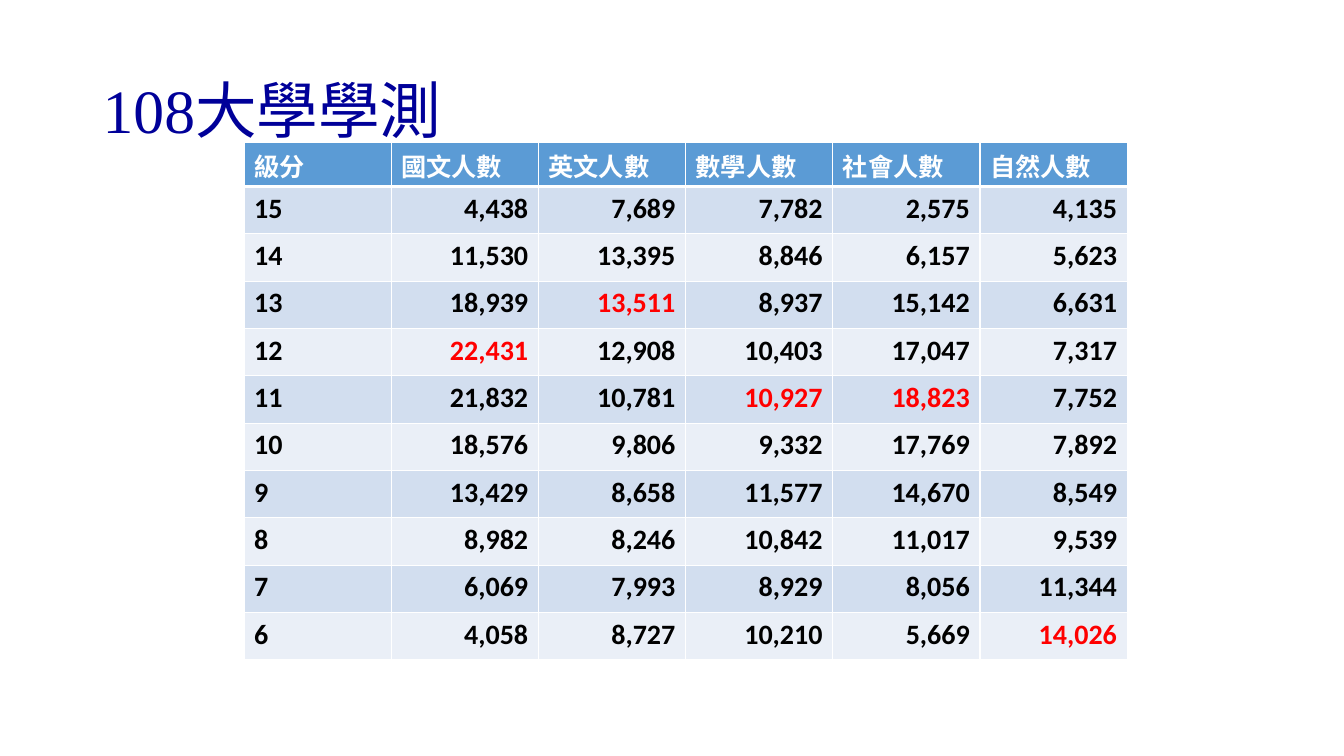
from lxml import etree
from pptx import Presentation
from pptx.dml.color import RGBColor
from pptx.enum.text import MSO_ANCHOR, PP_ALIGN
from pptx.oxml.ns import qn
from pptx.util import Inches, Pt

LEFT, RIGHT = PP_ALIGN.LEFT, PP_ALIGN.RIGHT
MIDDLE = MSO_ANCHOR.MIDDLE

NAVY = RGBColor(0x00, 0x00, 0x99)
BLUE = RGBColor(0x5B, 0x9B, 0xD5)
MID = RGBColor(0xD2, 0xDE, 0xEF)
PALE = RGBColor(0xEA, 0xEF, 0xF7)
WHITE = RGBColor(0xFF, 0xFF, 0xFF)
BLACK = RGBColor(0x00, 0x00, 0x00)
RED = RGBColor(0xFF, 0x00, 0x00)

TITLE = {"name": "Times New Roman", "size": Pt(44)}
HEAD = {"name": "Calibri", "size": Pt(18), "bold": True}
BODY = {**HEAD, "size": Pt(20)}

LABELS = ["級分", "國文人數", "英文人數", "數學人數", "社會人數", "自然人數"]
SCORES = [
    (15, 4438, 7689, 7782, 2575, 4135),
    (14, 11530, 13395, 8846, 6157, 5623),
    (13, 18939, 13511, 8937, 15142, 6631),
    (12, 22431, 12908, 10403, 17047, 7317),
    (11, 21832, 10781, 10927, 18823, 7752),
    (10, 18576, 9806, 9332, 17769, 7892),
    (9, 13429, 8658, 11577, 14670, 8549),
    (8, 8982, 8246, 10842, 11017, 9539),
    (7, 6069, 7993, 8929, 8056, 11344),
    (6, 4058, 8727, 10210, 5669, 14026),
]
MARKED = {(3, 2), (4, 1), (5, 3), (5, 4), (10, 5)}


def write(para, text, style, color, align=LEFT):
    """Put one styled run in a paragraph."""
    para.alignment = align
    run = para.add_run()
    run.text = text
    for key, value in style.items():
        setattr(run.font, key, value)
    run.font.color.rgb = color


def add_title(slide, text):
    """Add the slide title."""
    box = slide.shapes.add_textbox(
        Inches(0.92), Inches(0.4), Inches(11.5), Inches(1.45))
    frame = box.text_frame
    frame.word_wrap = True
    frame.vertical_anchor = MIDDLE
    para = frame.paragraphs[0]
    para.line_spacing = 0.9
    write(para, text, TITLE, NAVY)


def add_edges(cell, row):
    """Draw white cell borders, thick under the header row."""
    props = cell._tc.get_or_add_tcPr()
    widths = {"L": 1, "R": 1, "T": 3 if row == 1 else 1,
              "B": 3 if row == 0 else 1}
    for side, width in widths.items():
        line = etree.SubElement(props, qn(f"a:ln{side}"), w=str(Pt(width)))
        fill = etree.SubElement(line, qn("a:solidFill"))
        etree.SubElement(fill, qn("a:srgbClr"), val=str(WHITE))


def fill_cell(cell, row, col, value):
    """Style one cell by its place in the table."""
    add_edges(cell, row)
    cell.fill.solid()
    para = cell.text_frame.paragraphs[0]
    if row == 0:
        cell.fill.fore_color.rgb = BLUE
        write(para, value, HEAD, WHITE)
    else:
        cell.fill.fore_color.rgb = MID if row % 2 else PALE
        color = RED if (row, col) in MARKED else BLACK
        write(para, f"{value:,}", BODY, color, RIGHT if col else LEFT)


def add_scores(slide):
    """Add the table of head counts by score."""
    rows = [LABELS, *SCORES]
    table = slide.shapes.add_table(
        len(rows), len(LABELS), Inches(2.42), Inches(1.41),
        Inches(8.76), Inches(5.17)).table
    for col in table.columns:
        col.width = Inches(1.46)
    for row, values in enumerate(rows):
        table.rows[row].height = Inches(0.47 if row else 0.44)
        for col, value in enumerate(values):
            fill_cell(table.cell(row, col), row, col, value)


def main():
    """Build and save the slide."""
    deck = Presentation()
    deck.slide_width, deck.slide_height = Inches(13.33), Inches(7.5)
    slide = deck.slides.add_slide(deck.slide_layouts[6])
    add_title(slide, "108大學學測")
    add_scores(slide)
    deck.save("out.pptx")


if __name__ == "__main__":
    main()
